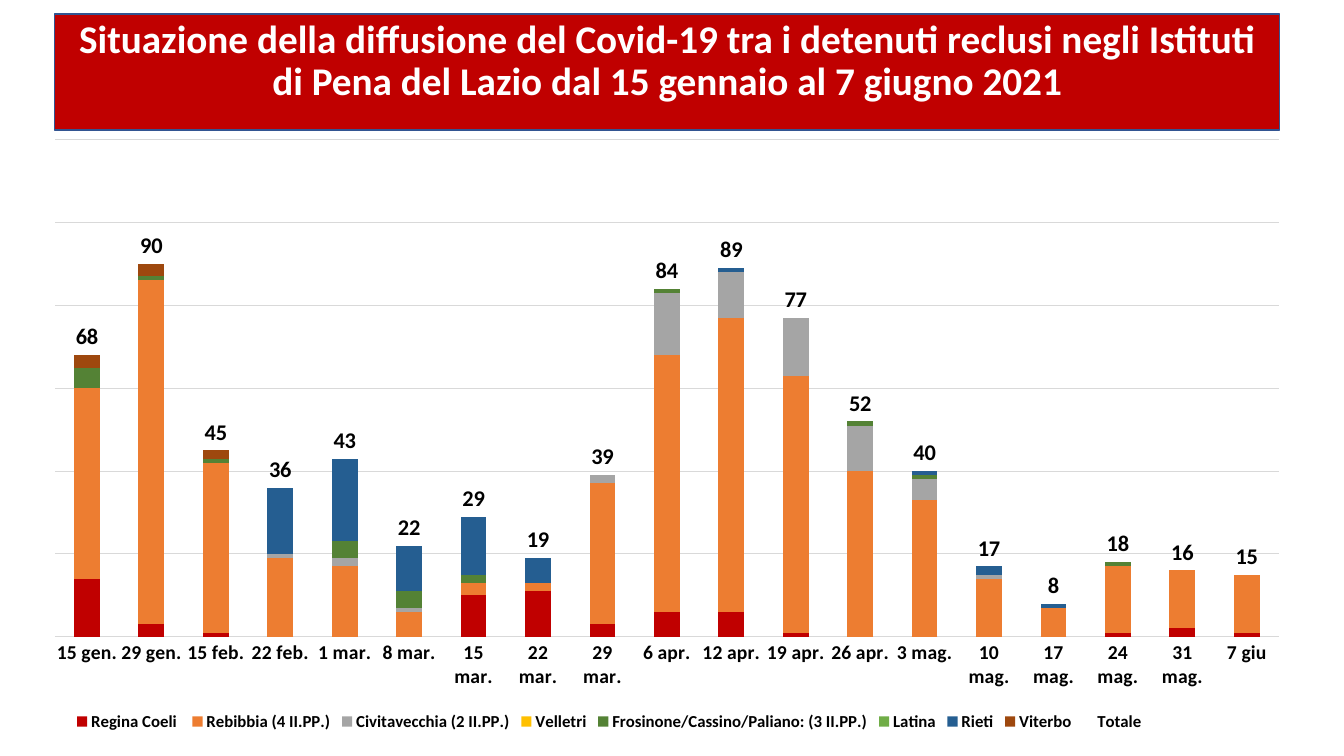
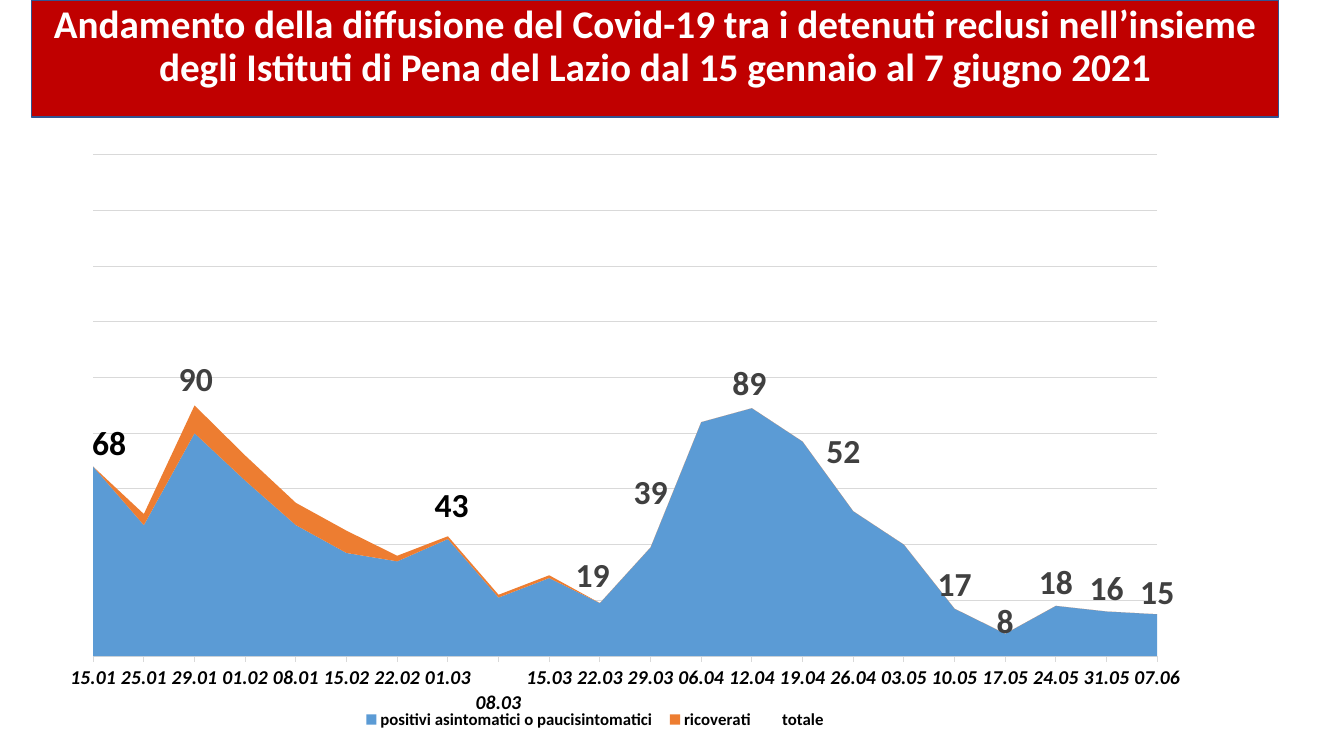
from pptx import Presentation
from pptx.chart.data import CategoryChartData
from pptx.dml.color import RGBColor
from pptx.enum.chart import XL_CHART_TYPE as ChartType, XL_LABEL_POSITION as LabelPosition
from pptx.enum.chart import XL_LEGEND_POSITION as LegendPosition, XL_TICK_MARK as TickMark
from pptx.enum.text import MSO_ANCHOR, MSO_AUTO_SIZE, PP_ALIGN
from pptx.oxml import parse_xml
from pptx.oxml.ns import nsdecls, qn
from pptx.util import Inches, Pt

# Colours
BLACK = RGBColor(0x00, 0x00, 0x00)
WHITE = RGBColor(0xFF, 0xFF, 0xFF)
DARK_GREY = RGBColor(0x40, 0x40, 0x40)
GRID_GREY = RGBColor(0xD9, 0xD9, 0xD9)
MID_GREY = RGBColor(0xA5, 0xA5, 0xA5)
RED = RGBColor(0xC0, 0x00, 0x00)
NAVY = RGBColor(0x32, 0x54, 0x91)
ORANGE = RGBColor(0xED, 0x7D, 0x31)
YELLOW = RGBColor(0xFF, 0xC0, 0x00)
DARK_GREEN = RGBColor(0x54, 0x82, 0x35)
GREEN = RGBColor(0x70, 0xAD, 0x47)
DARK_BLUE = RGBColor(0x25, 0x5E, 0x91)
BROWN = RGBColor(0x9E, 0x48, 0x0E)
LIGHT_BLUE = RGBColor(0x5B, 0x9B, 0xD5)

# Chart data: (series name, colour, values); no colour means an invisible total
PRISON_DATES = [
    "15 gen.", "29 gen.", "15 feb.", "22 feb.", "1 mar.", "8 mar.", "15 mar.",
    "22 mar.", "29 mar.", "6 apr.", "12 apr.", "19 apr.", "26 apr.", "3 mag.",
    "10 mag.", "17 mag.", "24 mag.", "31 mag.", "7 giu"]
NO_CASES = [0] * len(PRISON_DATES)
PRISON_SERIES = [
    ("Regina Coeli ", RED, [14, 3, 1, 0, 0, 0, 10, 11, 3, 6, 6, 1, 0, 0, 0, 0, 1, 2, 1]),
    ("Rebibbia (4 II.PP.)", ORANGE,
     [46, 83, 41, 19, 17, 6, 3, 2, 34, 62, 71, 62, 40, 33, 14, 7, 16, 14, 14]),
    ("Civitavecchia (2 II.PP.)", MID_GREY,
     [0, 0, 0, 1, 2, 1, 0, 0, 2, 15, 11, 14, 11, 5, 1, 0, 0, 0, 0]),
    ("Velletri", YELLOW, NO_CASES),
    ("Frosinone/Cassino/Paliano: (3 II.PP.)", DARK_GREEN,
     [5, 1, 1, 0, 4, 4, 2, 0, 0, 1, 0, 0, 1, 1, 0, 0, 1, 0, 0]),
    ("Latina", GREEN, NO_CASES),
    ("Rieti", DARK_BLUE, [0, 0, 0, 16, 20, 11, 14, 6, 0, 0, 1, 0, 0, 1, 2, 1, 0, 0, 0]),
    ("Viterbo", BROWN, [3, 3, 2] + [0] * 16),
    ("Totale", None,
     [68, 90, 45, 36, 43, 22, 29, 19, 39, 84, 89, 77, 52, 40, 17, 8, 18, 16, 15]),
]

TREND_DATES = [
    "15.01", "25.01", "29.01", "01.02 ", "08.01", "15.02", "22.02", "01.03", " 08.03",
    "15.03", "22.03", "29.03", "06.04", "12.04", "19.04", "26.04", "03.05", "10.05",
    "17.05", "24.05", "31.05", "07.06"]
SPRING_CASES = [39, 84, 89, 77, 52, 40, 17, 8, 18, 16, 15]
TREND_SERIES = [
    ("positivi asintomatici o paucisintomatici", LIGHT_BLUE,
     [68, 47, 80, 63, 47, 37, 34, 42, 21, 28, 19] + SPRING_CASES),
    ("ricoverati", ORANGE, [0, 4, 10, 9, 8, 8, 2, 1, 1, 1, 0, 0] + [None] * 10),
    ("totale", None, [68, 51, 90, 72, 55, 45, 36, 43, 22, 29, 19] + SPRING_CASES),
]
HIDDEN_LABELS = [1, 3, 4, 5, 6, 8, 9, 12, 14, 16]
# Label shifts in percent of the chart's width and height
MOVED_LABELS = {0: (1.3, 11.9), 2: (0.1, 16.5), 7: (0.3, 4.9), 10: (-0.6, 0),
                13: (-0.2, 16.5), 15: (-0.8, 2.3), 19: (0, 0.5)}
BLACK_LABELS = [0, 7]


def set_font(font, size, color=BLACK, bold=True, italic=False):
    font.name, font.size = "Calibri", Pt(size)
    font.bold, font.italic = bold, italic
    font.color.rgb = color


def write_text(frame, text, align=PP_ALIGN.CENTER, spacing=0.9, **font_format):
    frame.word_wrap = True
    frame.auto_size = MSO_AUTO_SIZE.NONE
    frame.vertical_anchor = MSO_ANCHOR.TOP
    paragraph = frame.paragraphs[0]
    paragraph.alignment, paragraph.line_spacing = align, spacing
    run = paragraph.add_run()
    run.text = text
    set_font(run.font, **font_format)


def manual_layout(x, y, width=None, height=None, inner=False):
    """Return a c:layout: a shift, or a fixed box when a size is given."""
    values = [("x", x), ("y", y)]
    modes = '<c:layoutTarget val="inner"/>' if inner else ""
    if width is not None:
        values += [("w", width), ("h", height)]
        modes += '<c:xMode val="edge"/><c:yMode val="edge"/>'
    sizes = "".join(f'<c:{tag} val="{value}"/>' for tag, value in values)
    return parse_xml(f'<c:layout {nsdecls("c")}><c:manualLayout>{modes}{sizes}'
                     '</c:manualLayout></c:layout>')


def place(element, index, layout):
    """Give a chart part its layout as the child at this index."""
    for old_layout in element.findall(qn("c:layout")):
        element.remove(old_layout)
    element.insert(index, layout)


class Deck:
    """Shared style and the slide being filled."""

    def __init__(self):
        self.presentation = Presentation()
        self.presentation.slide_width = Inches(13.33)
        self.presentation.slide_height = Inches(7.5)
        self.slide = None

    def add_slide(self, title, left, top, width, height):
        self.slide = self.presentation.slides.add_slide(self.presentation.slide_layouts[5])
        band = self.slide.shapes.title
        band.left, band.top = Inches(left), Inches(top)
        band.width, band.height = Inches(width), Inches(height)
        band.fill.solid()
        band.fill.fore_color.rgb = RED
        band.line.color.rgb = NAVY
        band.line.width = Pt(1)
        write_text(band.text_frame, title, size=28, color=WHITE)

    def add_chart(self, kind, box, plot_box, legend_box, categories, series_rows, maximum,
                  tick=TickMark.NONE, italic=False):
        data = CategoryChartData()
        data.categories = categories
        for name, _, values in series_rows:
            data.add_series(name, values)
        chart = self.slide.shapes.add_chart(kind, *map(Inches, box), data).chart
        chart.has_title = False
        set_font(chart.font, 10, bold=False)

        # Legend
        chart.has_legend = True
        chart.legend.position = LegendPosition.BOTTOM
        chart.legend.include_in_layout = False
        set_font(chart.legend.font, 12)

        # Axes and grid
        dates, cases = chart.category_axis, chart.value_axis
        dates.major_tick_mark, dates.minor_tick_mark = tick, TickMark.NONE
        set_font(dates.tick_labels.font, 14, italic=italic)
        cases.minimum_scale, cases.maximum_scale, cases.major_unit = 0, maximum, 20
        cases.has_major_gridlines = True
        for line in (dates.format.line, cases.major_gridlines.format.line):
            line.color.rgb = GRID_GREY
            line.width = Pt(0.75)
        cases.visible = False

        # Series colours
        plot = chart.plots[0]
        plot.vary_by_categories = False
        for series, (_, color, _) in zip(plot.series, series_rows):
            fill = series.format.fill
            if color is None:
                fill.background()
            else:
                fill.solid()
                fill.fore_color.rgb = color

        # Plot area and legend positions
        chart_element = chart.element.chart
        place(chart_element.plotArea, 0, manual_layout(*plot_box, inner=True))
        place(chart_element.find(qn("c:legend")), 1, manual_layout(*legend_box))
        return plot

    def label_totals(self, plot, size, color, position=None):
        series = list(plot.series)[-1]
        labels = series.data_labels
        labels.show_value = True
        set_font(labels.font, size, color)
        if position is not None:
            labels.position = position
        for leader_lines in labels._element.findall(qn("c:showLeaderLines")):
            leader_lines.set("val", "0")
        return series

    def adjust_labels(self, series, size, color):
        labels_element = series.data_labels._element
        for index, (x, y) in MOVED_LABELS.items():
            label = series.points[index].data_label
            set_font(label.font, size, BLACK if index in BLACK_LABELS else color)
            index_element = labels_element.xpath(f'c:dLbl/c:idx[@val="{index}"]')[0]
            index_element.addnext(manual_layout(x / 100, y / 100))
        for index in HIDDEN_LABELS:
            hidden = parse_xml(f'<c:dLbl {nsdecls("c")}><c:idx val="{index}"/>'
                               '<c:delete val="1"/></c:dLbl>')
            position = sum(int(idx.get("val")) < index
                           for idx in labels_element.xpath("c:dLbl/c:idx"))
            labels_element.insert(position, hidden)


def main():
    deck = Deck()

    # Cases by prison
    deck.add_slide("Situazione della diffusione del Covid-19 tra i detenuti reclusi negli "
                   "Istituti di Pena del Lazio dal 15 gennaio al 7 giugno 2021",
                   0.54, 0.14, 12.15, 1.15)
    plot = deck.add_chart(ChartType.COLUMN_STACKED, (0.27, 1.28, 12.42, 6.22),
                          (0.022, 0.017, 0.978, 0.793), (0.035, 0.92, 0.86, 0.05),
                          PRISON_DATES, PRISON_SERIES, 120)
    plot.gap_width, plot.overlap = 150, 100
    deck.label_totals(plot, 16, BLACK, LabelPosition.INSIDE_BASE)

    # Overall trend
    deck.add_slide("Andamento della diffusione del Covid-19 tra i detenuti reclusi "
                   "nell’insieme degli Istituti di Pena del Lazio dal 15 gennaio "
                   "al 7 giugno 2021", 0.31, 0, 12.37, 1.16)
    plot = deck.add_chart(ChartType.AREA_STACKED, (0.46, 1.27, 12.23, 6.05),
                          (0.038, 0.044, 0.863, 0.822), (0.25, 0.945, 0.39, 0.05),
                          TREND_DATES, TREND_SERIES, 180,
                          tick=TickMark.OUTSIDE, italic=True)
    totals = deck.label_totals(plot, 24, DARK_GREY)
    deck.adjust_labels(totals, 24, DARK_GREY)

    deck.presentation.save("out.pptx")


if __name__ == "__main__":
    main()
